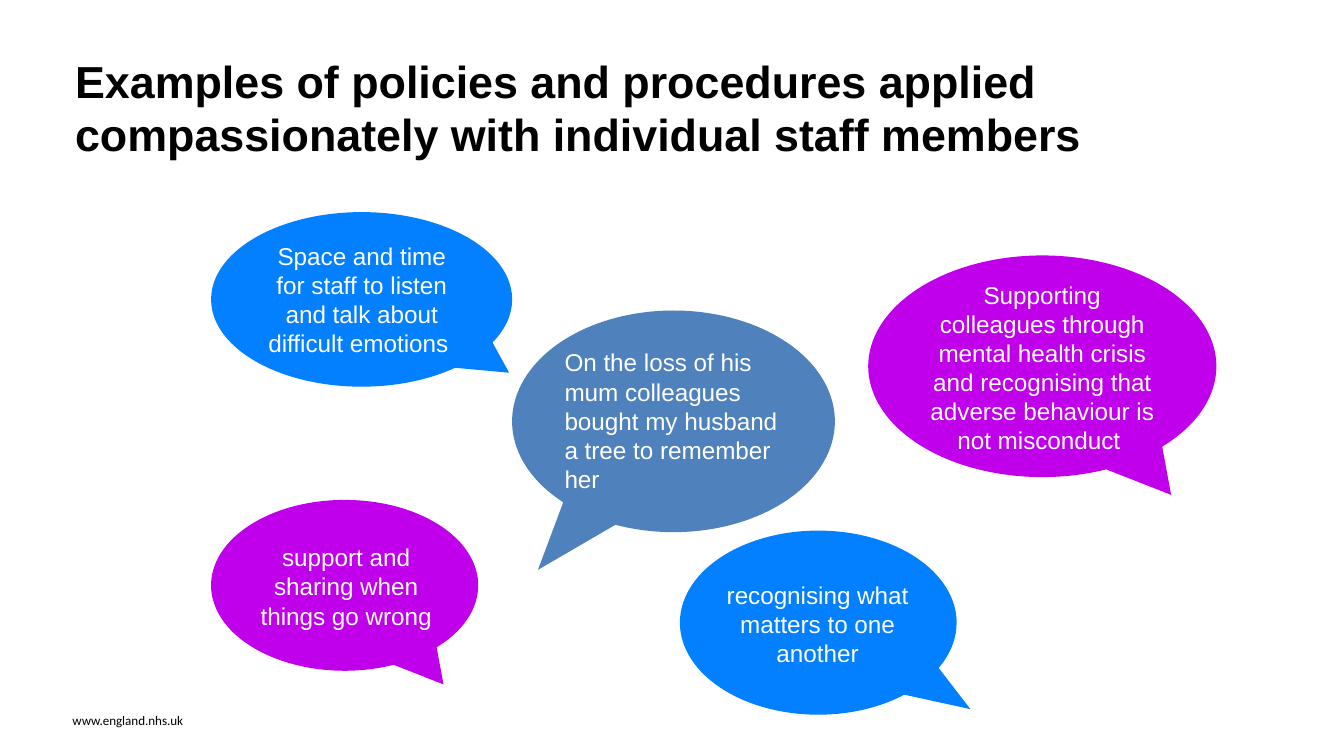
from pptx import Presentation
from pptx.dml.color import RGBColor
from pptx.enum.shapes import MSO_SHAPE as Shape
from pptx.enum.text import MSO_ANCHOR as Anchor, PP_ALIGN as Align
from pptx.util import Cm, Pt


def color(code):
    return RGBColor.from_string(code)


def write(host, place, text, size, hue, font="Arial", bold=False,
          align=Align.LEFT, anchor=Anchor.MIDDLE):
    """Add a wrapped text box to a slide's or a group's shapes."""
    frame = host.add_textbox(*map(Cm, place)).text_frame
    frame.word_wrap = True
    frame.vertical_anchor = anchor
    frame.margin_left = frame.margin_right = Cm(0.1)
    frame.margin_top = frame.margin_bottom = Cm(0.1)
    para = frame.paragraphs[0]
    para.alignment = align
    run = para.add_run()
    run.text = text
    run.font.name = font
    run.font.size = Pt(size)
    run.font.bold = bold
    run.font.color.rgb = color(hue)


BLUE, PURPLE, STEEL = "0280FF", "C100EB", "4F81BD"
WHITE, PALE, BLACK = "FFFFFF", "FEFEFE", "000000"

deck = Presentation()
deck.slide_width = Cm(25.4)
deck.slide_height = Cm(14.29)
slide = deck.slides.add_slide(deck.slide_layouts[6])

write(slide.shapes, (1.27, 13.36, 5.92, 0.51), "www.england.nhs.uk",
      7, BLACK, font="Calibri")
write(slide.shapes, (1.32, 0.91, 19.86, 2.13),
      "Examples of policies and procedures applied "
      "compassionately with individual staff members",
      24, BLACK, bold=True, anchor=Anchor.TOP)

# bubble place, tail tip, fill, text place, text colour, alignment, text
bubbles = [
    ((3.99, 4.01, 5.69, 3.3), (0.49, 0.42), BLUE,
     (4.83, 4.5, 4.01, 2.31), WHITE, Align.CENTER,
     "Space and time for staff to listen and talk about "
     "difficult emotions "),
    ((3.99, 9.45, 5.05, 3.23), (0.37, 0.58), PURPLE,
     (4.75, 10.19, 3.58, 1.78), PALE, Align.CENTER,
     "support and sharing when things go wrong"),
    ((12.85, 10.03, 5.23, 3.48), (0.55, 0.47), BLUE,
     (13.61, 10.9, 3.68, 1.78), PALE, Align.CENTER,
     "recognising what matters to one another"),
    ((9.68, 5.87, 6.1, 4.19), (-0.42, 0.67), STEEL,
     (10.57, 6.53, 4.32, 2.84), WHITE, Align.LEFT,
     "On the loss of his mum colleagues bought my husband "
     "a tree to remember her"),
    ((16.41, 4.83, 6.58, 4.19), (0.37, 0.58), PURPLE,
     (17.37, 4.06, 4.65, 5.77), PALE, Align.CENTER,
     "Supporting colleagues through mental health crisis and "
     "recognising that adverse behaviour is not misconduct "),
]

for place, tip, fill, area, hue, align, text in bubbles:
    group = slide.shapes.add_group_shape()
    bubble = group.shapes.add_shape(Shape.OVAL_CALLOUT, *map(Cm, place))
    bubble.adjustments[0], bubble.adjustments[1] = tip
    bubble.fill.solid()
    bubble.fill.fore_color.rgb = color(fill)
    bubble.line.fill.background()
    bubble.shadow.inherit = False
    write(group.shapes, area, text, 13, hue, align=align)

deck.save("out.pptx")
